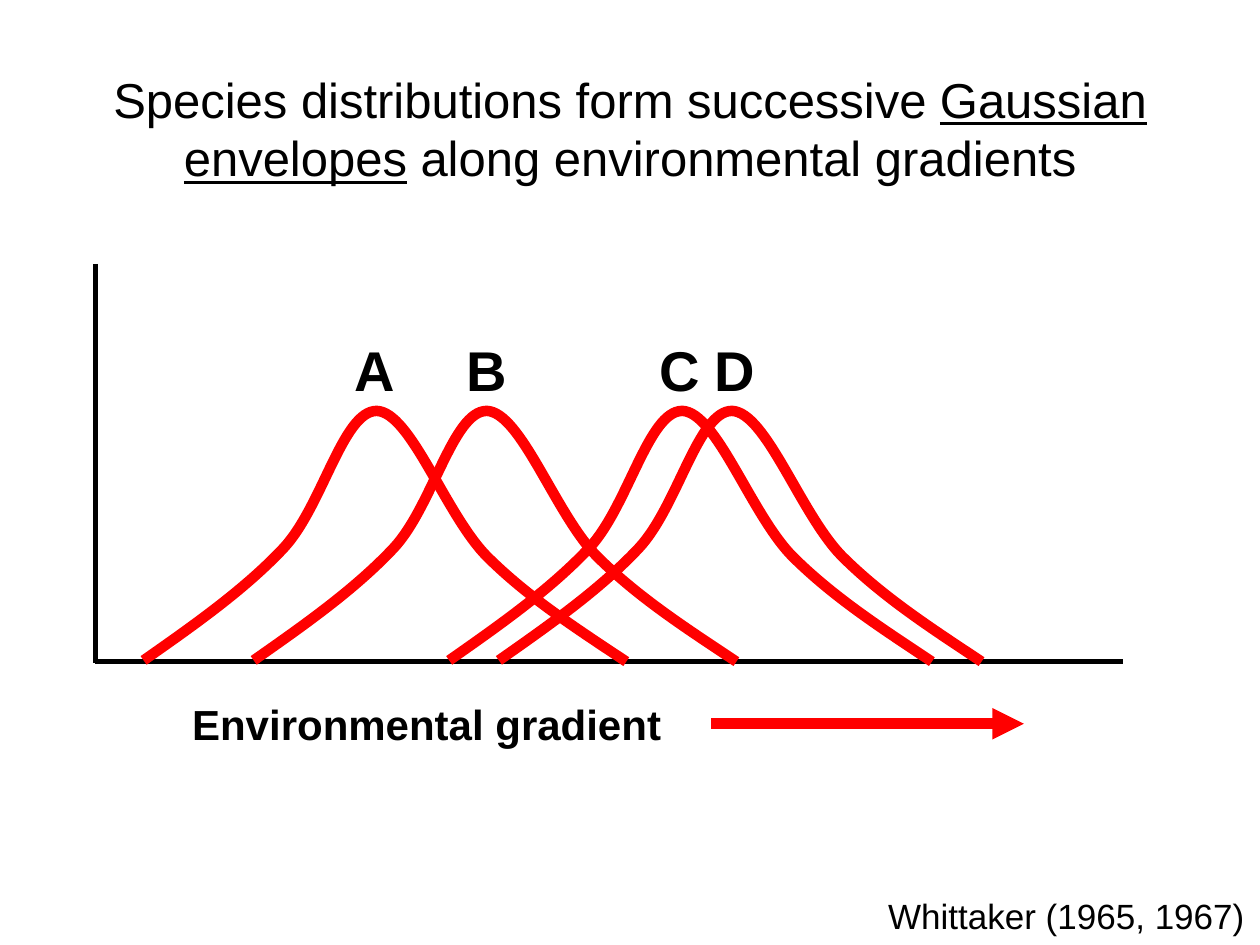
from lxml import etree
from pptx import Presentation
from pptx.dml import color
from pptx.enum import shapes, text
from pptx.oxml import ns
from pptx.util import Pt

BLACK = "000000"
RED = "FF0000"
BELL = [
    (0, 142.6), (28.8, 122.4), (57.6, 102.2), (79.9, 78.5), (102.2, 54.7),
    (113.8, 0), (133.2, 0), (152.6, 0.7), (172.1, 58.3), (195.8, 82.8),
    (219.6, 106.6), (247.7, 124.6), (275.8, 143.3),
]
SPECIES = [("A", 27.4, 141.1), ("B", 90.3, 204.9), ("C", 202, 315.1), ("D", 230.4, 346.3)]


def rgb(code):
    return color.RGBColor.from_string(code)


def ink(line, code, width):
    line.color.rgb = rgb(code)
    line.width = Pt(width)


def write(slide, box, parts, size, bold=False, wrap=False, align=text.PP_ALIGN.LEFT):
    frame = slide.shapes.add_textbox(*map(Pt, box)).text_frame
    frame.word_wrap = wrap
    frame.auto_size = text.MSO_AUTO_SIZE.SHAPE_TO_FIT_TEXT
    para = frame.paragraphs[0]
    para.alignment = align
    for words, under in parts:
        run = para.add_run()
        run.text = words
        run.font.name = "Arial"
        run.font.size = Pt(size)
        run.font.bold = bold
        run.font.underline = under
        run.font.color.rgb = rgb(BLACK)


def rule(slide, start, end, code, width, arrow=False):
    link = slide.shapes.add_connector(
        shapes.MSO_CONNECTOR.STRAIGHT, *map(Pt, (*start, *end)))
    ink(link.line, code, width)
    props = link._element.spPr
    if arrow:
        etree.SubElement(props.find(ns.qn("a:ln")), ns.qn("a:tailEnd"), type="triangle")
    etree.SubElement(props, ns.qn("a:effectLst"))


def bend(shape):
    lines = list(shape._element.iter(ns.qn("a:lnTo")))
    track = lines[0].getparent()
    for i in range(0, len(lines), 3):
        cubic = etree.SubElement(track, ns.qn("a:cubicBezTo"))
        for line in lines[i:i + 3]:
            cubic.append(line[0])
            track.remove(line)


def curve(slide, left, top):
    spots = [(Pt(left + x), Pt(top + y)) for x, y in BELL]
    pen = slide.shapes.build_freeform(*spots[0], scale=1.0)
    pen.add_line_segments(spots[1:], close=False)
    bell = pen.convert_to_shape()
    bend(bell)
    bell.shadow.inherit = False
    bell.fill.background()
    ink(bell.line, RED, 6)


def title(slide, box):
    parts = [("Species distributions form successive ", False),
             ("Gaussian envelopes", True),
             (" along environmental gradients", False)]
    write(slide, box, parts, 28, wrap=True, align=text.PP_ALIGN.CENTER)


def plot(slide, box):
    left, top, width, height = box
    base = top + height
    rule(slide, (left, top), (left, base + 0.7), BLACK, 3)
    rule(slide, (left - 0.7, base), (left + width, base), BLACK, 3)
    for name, start, mark in SPECIES:
        curve(slide, left + start, top + 84)
        write(slide, (left + mark, top + 37.4, 38.2, 46.1), [(name, False)], 32, bold=True)


def legend(slide, box):
    left, top, width, height = box
    write(slide, (left, top, 291.6, height), [("Environmental gradient", False)], 24, bold=True)
    mid = top + height / 2
    rule(slide, (left + 303.8, mid), (left + width, mid), RED, 6, arrow=True)


def source(slide, box):
    write(slide, box, [("Whittaker (1965, 1967)", False)], 20)


def main():
    deck = Presentation()
    deck.slide_width, deck.slide_height = Pt(720), Pt(540)
    slide = deck.slides.add_slide(deck.slide_layouts[6])
    title(slide, (20.9, 36, 678.2, 74.9))
    plot(slide, (54.7, 150.8, 587.2, 227.2))
    legend(slide, (102.7, 395.6, 482.4, 36))
    source(slide, (500.4, 507.6, 219.6, 31.7))
    deck.save("out.pptx")


if __name__ == "__main__":
    main()
